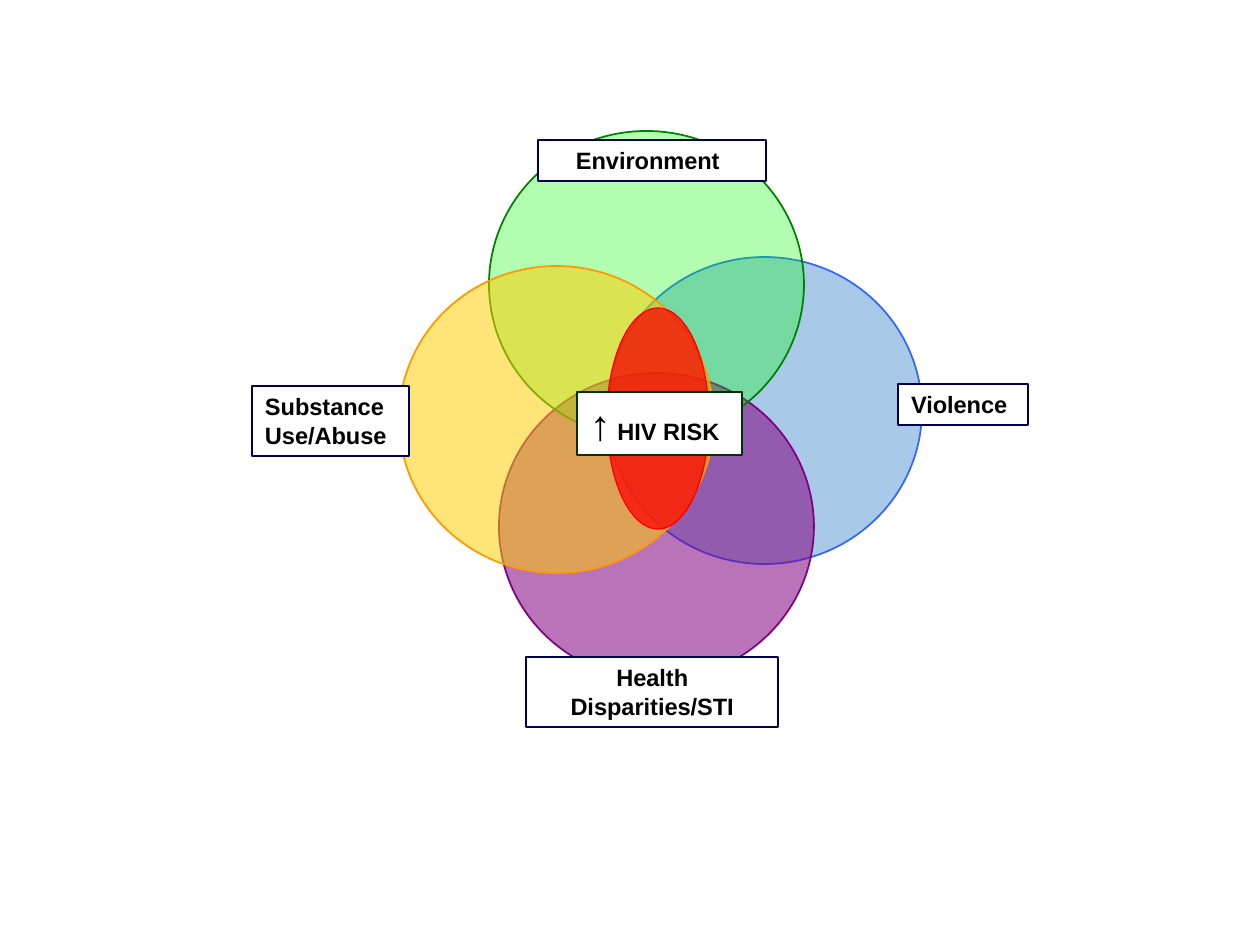
import pptx
import pptx.dml.color
import pptx.enum.shapes
import pptx.enum.text
import pptx.oxml.ns
import pptx.util
from lxml import etree

SCALE = 914400 / 126
SHAPES = pptx.enum.shapes.MSO_SHAPE
ALIGN = pptx.enum.text.PP_ALIGN


def px(length):
    return pptx.util.Emu(round(length * SCALE))


def paint(color_format, value):
    color_format.rgb = pptx.dml.color.RGBColor.from_string(value)


def add_outlined(group, kind, place, fill, line, width=1):
    shape = group.shapes.add_shape(kind, *map(px, place))
    shape.shadow.inherit = False
    shape.fill.solid()
    paint(shape.fill.fore_color, fill)
    paint(shape.line.color, line)
    shape.line.width = pptx.util.Pt(width)
    return shape


def add_ellipse(group, place, fill, opacity, line, width=1):
    ellipse = add_outlined(group, SHAPES.OVAL, place, fill, line, width)
    qualified = pptx.oxml.ns.qn
    color = ellipse.fill._xPr.find(qualified("a:solidFill"))[0]
    etree.SubElement(color, qualified("a:alpha"), val=str(opacity * 1000))


def add_label(group, place, text, line="00004C", align=ALIGN.LEFT, inset=13):
    box = add_outlined(group, SHAPES.RECTANGLE, place, "FFFFFF", line)
    frame = box.text_frame
    frame.word_wrap = True
    frame.vertical_anchor = pptx.enum.text.MSO_ANCHOR.TOP
    frame.margin_left = px(inset)
    para = frame.paragraphs[0]
    para.alignment = align
    para.font.name = "Arial"
    para.font.size = pptx.util.Pt(13.5)
    para.font.bold = True
    paint(para.font.color, "000000")
    para.add_run().text = text
    return para


def add_risk_label(group):
    para = add_label(group, (577, 392, 165, 63), "↑", line="003300")
    para.runs[0].font.size = pptx.util.Pt(24)
    para.add_run().text = " HIV RISK"


def main():
    deck = pptx.Presentation()
    deck.slide_width, deck.slide_height = px(1260), px(945)
    page = deck.slides.add_slide(deck.slide_layouts[6])
    diagram = page.shapes.add_group_shape()

    circles = [
        (607, 257, "5B9BD5", 53, "3366FF"),
        (499, 373, "800080", 55, "800080"),
        (489, 131, "00FF00", 30, "008000"),
        (399, 266, "FFCC00", 53, "FF9900"),
    ]
    for left, top, fill, opacity, line in circles:
        add_ellipse(diagram, (left, top, 315, 307), fill, opacity, line)
    add_ellipse(diagram, (607, 308, 102, 221), "FF0000", 73, "FF0000", 0.75)

    add_label(diagram, (538, 140, 228, 41), "Environment", inset=38)
    add_label(diagram, (252, 386, 157, 70), "Substance Use/Abuse")
    add_label(diagram, (898, 384, 130, 41), "Violence")
    add_label(diagram, (526, 657, 252, 70), "Health Disparities/STI", align=ALIGN.CENTER)
    add_risk_label(diagram)
    deck.save("out.pptx")


if __name__ == "__main__":
    main()
